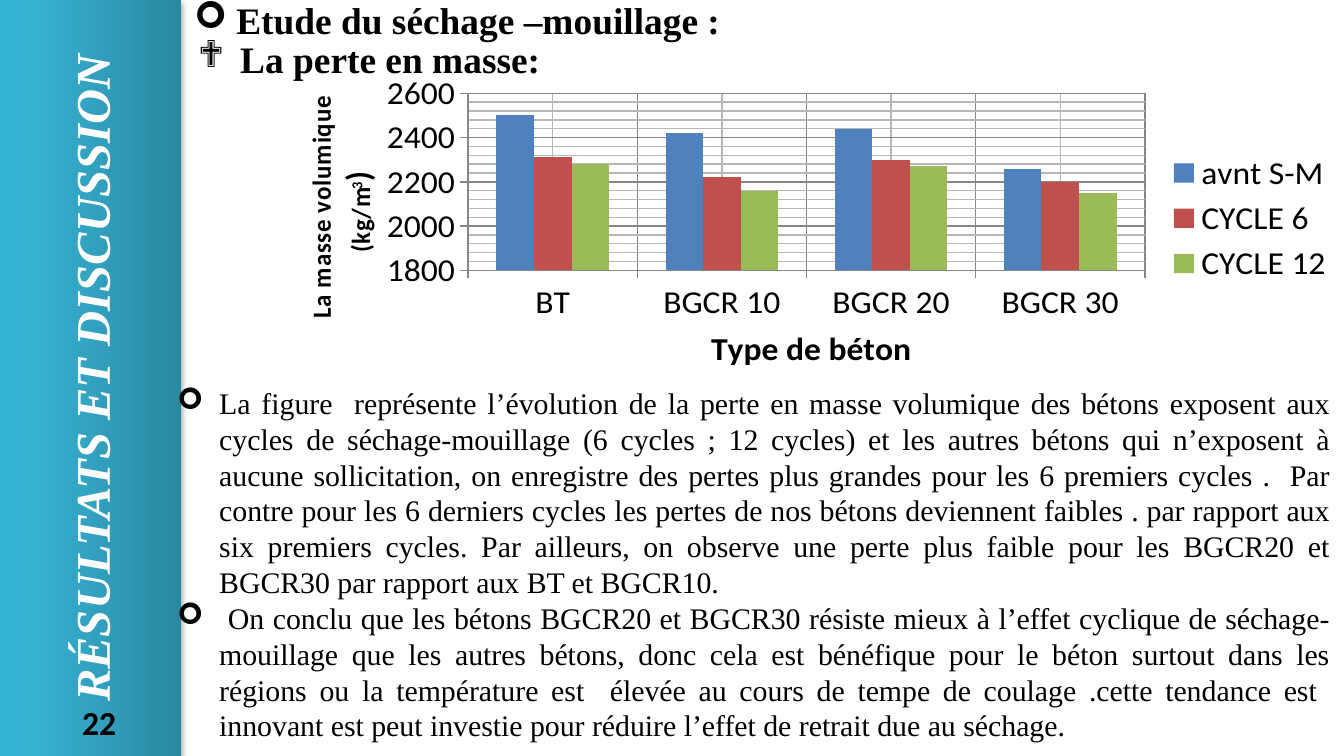
from dataclasses import dataclass

from lxml import etree
from pptx import Presentation
from pptx.chart.data import CategoryChartData
from pptx.dml.color import RGBColor
from pptx.enum.chart import XL_CHART_TYPE, XL_LEGEND_POSITION, XL_TICK_MARK
from pptx.enum.shapes import MSO_SHAPE
from pptx.enum.text import MSO_ANCHOR, PP_ALIGN
from pptx.oxml import parse_xml
from pptx.oxml.ns import nsdecls, qn
from pptx.util import Pt

CLUSTERED = XL_CHART_TYPE.COLUMN_CLUSTERED
LEGEND_RIGHT = XL_LEGEND_POSITION.RIGHT
TICK_OUT = XL_TICK_MARK.OUTSIDE
RECTANGLE = MSO_SHAPE.RECTANGLE
MIDDLE = MSO_ANCHOR.MIDDLE
LEFT, CENTER, JUSTIFY = PP_ALIGN.LEFT, PP_ALIGN.CENTER, PP_ALIGN.JUSTIFY

BLACK = RGBColor(0x00, 0x00, 0x00)
WHITE = RGBColor(0xFF, 0xFF, 0xFF)
BLUE = RGBColor(0x4F, 0x81, 0xBD)
RED = RGBColor(0xC0, 0x50, 0x4D)
GREEN = RGBColor(0x9B, 0xBB, 0x59)
MAJOR_GREY = RGBColor(0x86, 0x86, 0x86)
MINOR_GREY = RGBColor(0xB7, 0xB7, 0xB7)
BAND_LIGHT = RGBColor(0x34, 0xB4, 0xD6)
BAND_MIDDLE = RGBColor(0x37, 0xB1, 0xD2)
BAND_DARK = RGBColor(0x2A, 0x88, 0xA2)

SERIF, SANS = "Times New Roman", "Calibri"
EMU_PER_PX = 914400 / 134.4
INDENT_PX = 42


@dataclass
class Note:
    box: tuple[int, int, int, int]
    paragraphs: list[str]
    font: dict
    bullet: str = ""
    align: PP_ALIGN = LEFT
    wrap: bool = True


@dataclass
class Series:
    name: str
    values: tuple[int, ...]
    color: RGBColor


HEADING = {"name": SERIF, "size": Pt(20), "bold": True}
NOTES = [
    Note((69, 695, 62, 95), ["22"], {"name": SANS, "size": Pt(18), "bold": True}, wrap=False),
    Note((181, -9, 1163, 103), ["Etude du séchage –mouillage :"], HEADING, "➢"),
    Note((185, 30, 847, 103), ["La perte en masse:"], HEADING, "❖"),
    Note(
        (164, 378, 1180, 417),
        [
            "La figure  représente l’évolution de la perte en masse volumique des bétons "
            "exposent aux cycles de séchage-mouillage (6 cycles ; 12 cycles) et les autres "
            "bétons qui n’exposent à aucune sollicitation, on enregistre des pertes plus "
            "grandes pour les 6 premiers cycles .  Par contre pour les 6 derniers cycles les "
            "pertes de nos bétons deviennent faibles . par rapport aux six premiers cycles. "
            "Par ailleurs, on observe une perte plus faible pour les BGCR20 et BGCR30 par "
            "rapport aux BT et BGCR10.",
            " On conclu que les bétons BGCR20 et BGCR30 résiste mieux à l’effet cyclique de "
            "séchage-mouillage que les autres bétons, donc cela est bénéfique pour le béton "
            "surtout dans les régions ou la température est  élevée au cours de tempe de "
            "coulage .cette tendance est  innovant est peut investie pour réduire l’effet de "
            "retrait due au séchage.",
        ],
        {"name": SERIF, "size": Pt(16)},
        "➢",
        JUSTIFY,
    ),
]
CONCRETES = ["BT", "BGCR 10", "BGCR 20", "BGCR 30"]
DENSITIES = [
    Series("avnt S-M", (2500, 2420, 2440, 2260), BLUE),
    Series("CYCLE 6", (2310, 2220, 2300, 2200), RED),
    Series("CYCLE 12", (2280, 2160, 2270, 2150), GREEN),
]


def px(length: int) -> int:
    return round(length * EMU_PER_PX)


def apply(target, values: dict) -> None:
    for key, value in values.items():
        setattr(target, key, value)


def style_font(font, values: dict, color: RGBColor = BLACK) -> None:
    apply(font, values)
    font.color.rgb = color


def add_band(slide) -> None:
    width, height = 759, 182
    band = slide.shapes.add_shape(
        RECTANGLE, px((height - width) // 2), px((756 - height) // 2), px(width), px(height)
    )
    band.rotation = 270
    band.line.fill.background()
    stops = "".join(
        f'<a:gs pos="{position}"><a:srgbClr val="{color}"/></a:gs>'
        for position, color in ((0, BAND_LIGHT), (20000, BAND_MIDDLE), (100000, BAND_DARK))
    )
    properties = band._element.spPr
    properties.insert(2, parse_xml(
        f'<a:gradFill {nsdecls("a")} rotWithShape="1"><a:gsLst>{stops}</a:gsLst>'
        '<a:lin ang="5400000" scaled="0"/></a:gradFill>'
    ))
    properties.append(parse_xml(
        f'<a:effectLst {nsdecls("a")}><a:outerShdw blurRad="40000" dist="23000" dir="5400000" '
        'rotWithShape="0"><a:srgbClr val="000000"><a:alpha val="35000"/></a:srgbClr>'
        '</a:outerShdw></a:effectLst>'
    ))
    band.text_frame.vertical_anchor = MIDDLE
    paragraph = band.text_frame.paragraphs[0]
    paragraph.alignment = CENTER
    run = paragraph.add_run()
    run.text = "RÉSULTATS ET DISCUSSION"
    style_font(run.font, {"name": SERIF, "size": Pt(26), "bold": True, "italic": True}, WHITE)


def add_note(slide, note: Note) -> None:
    frame = slide.shapes.add_textbox(*map(px, note.box)).text_frame
    frame.word_wrap = note.wrap
    for index, text in enumerate(note.paragraphs):
        paragraph = frame.add_paragraph() if index else frame.paragraphs[0]
        paragraph.alignment = note.align
        run = paragraph.add_run()
        run.text = text
        style_font(run.font, note.font)
        if note.bullet:
            properties = paragraph._p.get_or_add_pPr()
            properties.set("marL", str(px(INDENT_PX)))
            properties.set("indent", str(-px(INDENT_PX)))
            etree.SubElement(properties, qn("a:buFont")).set("typeface", "Wingdings")
            etree.SubElement(properties, qn("a:buChar")).set("char", note.bullet)


def place(parent, index: int, **position) -> None:
    for layout in parent.findall(qn("c:layout")):
        parent.remove(layout)
    layout = parse_xml(f'<c:layout {nsdecls("c")}><c:manualLayout/></c:layout>')
    for key, value in position.items():
        etree.SubElement(layout[0], qn(f"c:{key}")).set("val", str(value))
    parent.insert(index, layout)


def style_axis(axis, pieces: list[tuple[str, int]], x: float, y: float):
    apply(axis, {
        "has_major_gridlines": True, "has_minor_gridlines": True, "major_tick_mark": TICK_OUT,
    })
    axis.major_gridlines.format.line.color.rgb = MAJOR_GREY
    axis._element.find(qn("c:minorGridlines")).append(parse_xml(
        f'<c:spPr {nsdecls("c", "a")}><a:ln><a:solidFill><a:srgbClr val="{MINOR_GREY}"/>'
        '</a:solidFill></a:ln></c:spPr>'
    ))
    axis.format.line.color.rgb = MAJOR_GREY
    title = axis.axis_title
    paragraph = title.text_frame.paragraphs[0]
    for text, size in pieces:
        run = paragraph.add_run()
        run.text = text
        style_font(run.font, {"name": SANS, "size": Pt(size), "bold": True})
    place(title._element, 1, xMode="edge", yMode="edge", x=x, y=y)
    return title.text_frame


def add_density_chart(slide) -> None:
    data = CategoryChartData()
    data.categories = CONCRETES
    for series in DENSITIES:
        data.add_series(series.name, series.values)
    chart = slide.shapes.add_chart(CLUSTERED, *map(px, (220, 73, 1128, 305)), data).chart
    style_font(chart.font, {"name": SANS, "size": Pt(18)})
    apply(chart, {"has_title": False, "has_legend": True})
    apply(chart.legend, {"position": LEGEND_RIGHT, "include_in_layout": False})
    plot = chart.plots[0]
    apply(plot, {"gap_width": 150, "overlap": 0, "vary_by_categories": False})
    for drawn, series in zip(plot.series, DENSITIES):
        drawn.format.fill.solid()
        drawn.format.fill.fore_color.rgb = series.color
    place(
        chart._chartSpace.chart.plotArea, 0, layoutTarget="inner", xMode="edge", yMode="edge",
        x=0.22, y=0.07, w=0.6, h=0.61,
    )
    style_axis(chart.category_axis, [("Type de béton", 18)], 0.43, 0.85)
    apply(chart.value_axis, {
        "minimum_scale": 1800, "maximum_scale": 2600, "major_unit": 200, "minor_unit": 40,
    })
    frame = style_axis(
        chart.value_axis, [("La masse volumique (kg/m", 14), ("3", 14), (")", 18)], 0.07, 0.1
    )
    frame.paragraphs[0].runs[1].font._element.set("baseline", "30000")
    for key, value in {"rot": "-5400000", "vert": "horz"}.items():
        frame._txBody.bodyPr.set(key, value)


def main() -> None:
    deck = Presentation()
    apply(deck, {"slide_width": px(1344), "slide_height": px(756)})
    slide = deck.slides.add_slide(deck.slide_layouts[6])
    add_band(slide)
    add_density_chart(slide)
    for note in NOTES:
        add_note(slide, note)
    deck.save("out.pptx")


if __name__ == "__main__":
    main()
